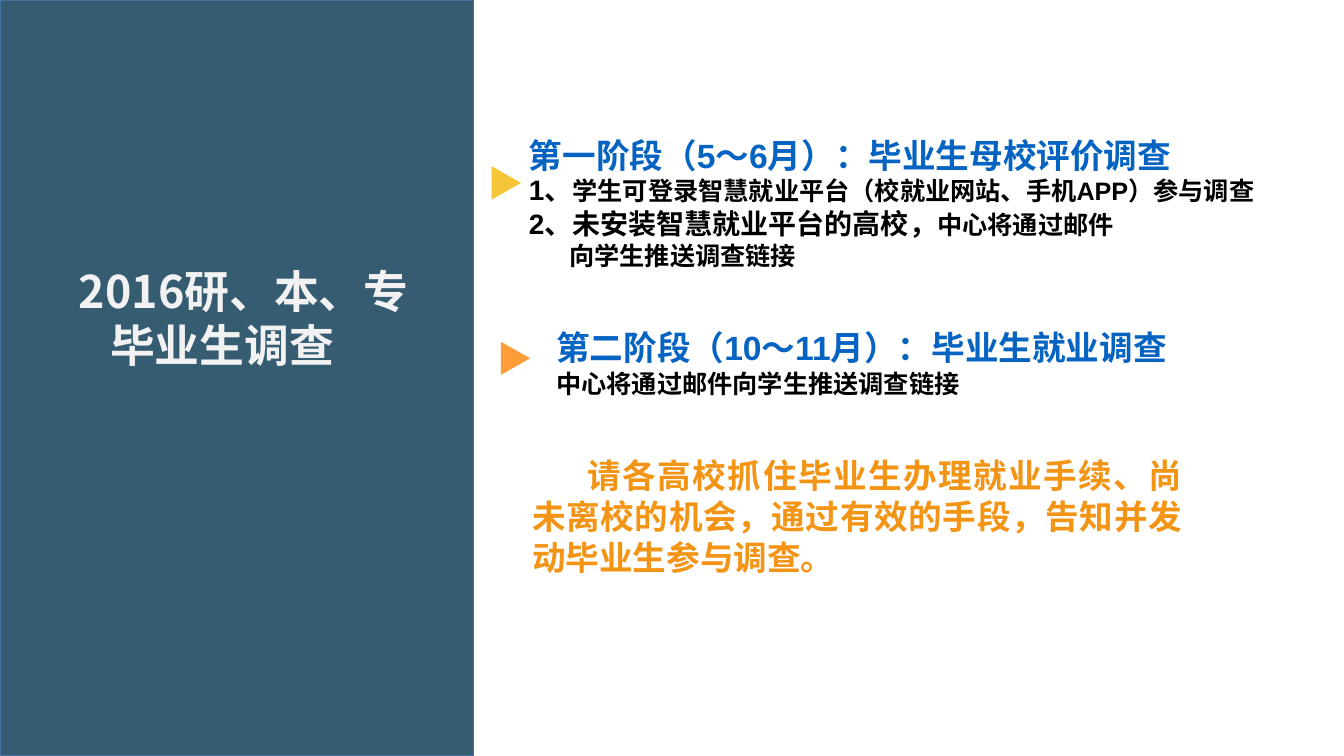
"""Build the slide on the two stages of the 2016 graduate survey."""
from lxml import etree
from pptx import Presentation
from pptx.dml.color import RGBColor
from pptx.enum.shapes import MSO_SHAPE
from pptx.enum.text import MSO_ANCHOR, MSO_AUTO_SIZE, PP_ALIGN
from pptx.oxml.ns import qn
from pptx.util import Cm, Pt

RECT = MSO_SHAPE.RECTANGLE
ARROW = MSO_SHAPE.ISOSCELES_TRIANGLE
TOP = MSO_ANCHOR.TOP
FIXED = MSO_AUTO_SIZE.NONE
LEFT = PP_ALIGN.LEFT
JUST = PP_ALIGN.JUSTIFY

SLATE = RGBColor(0x36, 0x5C, 0x71)
EDGE = RGBColor(0x43, 0x73, 0x9E)
PALE = RGBColor(0xF2, 0xF2, 0xF2)
BLUE = RGBColor(0x05, 0x63, 0xC1)
BLACK = RGBColor(0x00, 0x00, 0x00)
GOLD = RGBColor(0xF5, 0xC6, 0x38)
AMBER = RGBColor(0xFF, 0x9D, 0x38)
ORANGE = RGBColor(0xF3, 0x94, 0x15)
SANS = "Arial"
HAN = "Noto Sans CJK SC"


def write(shape, lines, align, face):
    """Fill a shape with (runs, color, line pitch, left margin, first indent)."""
    frame = shape.text_frame
    frame.word_wrap = True
    frame.auto_size = FIXED
    frame.vertical_anchor = TOP
    for i, (parts, color, pitch, margin, indent) in enumerate(lines):
        para = frame.add_paragraph() if i else frame.paragraphs[0]
        para.alignment = align
        para.line_spacing = Pt(pitch)
        para.space_before = para.space_after = Pt(0)
        props = para._p.get_or_add_pPr()
        props.set("marL", str(Cm(margin)))
        props.set("indent", str(Cm(indent)))
        for text, size in parts:
            run = para.add_run()
            run.text = text
            run.font.name = face
            run.font.size = Pt(size)
            run.font.bold = True
            run.font.color.rgb = color
            east = etree.Element(qn("a:ea"), typeface=HAN)
            run.font._element.find(qn("a:latin")).addnext(east)


deck = Presentation()
deck.slide_width = Cm(33.87)
deck.slide_height = Cm(19.05)
slide = deck.slides.add_slide(deck.slide_layouts[5])
shapes = slide.shapes

panel = shapes.add_shape(RECT, 0, 0, Cm(11.94), deck.slide_height)
panel.shadow.inherit = False
panel.fill.solid()
panel.fill.fore_color.rgb = SLATE
panel.line.color.rgb = EDGE
panel.line.width = Pt(1)

title = shapes.title
title.element.addprevious(panel.element)
title.left, title.top = Cm(1.5), Cm(6.53)
title.width, title.height = Cm(9.15), Cm(4.2)
write(title, [
    ([("2016研、本、专", 32)], PALE, 38.2, 0, 0.23),
    ([("毕业生调查", 32)], PALE, 38.2, 1.02, 0),
], LEFT, HAN)

boxes = [
    (13.08, 3.25, 18.9, 4.57, [
        ([("第一阶段（5～6月）：毕业生母校评价调查", 24)], BLUE, 29.3, 0, 0),
        ([("1、", 20), ("学生可登录智慧就业平台（校就业网站、手机APP）参与调查", 18)],
         BLACK, 22.2, 0, 0),
        ([("2、未安装智慧就业平台的高校，", 20), ("中心将通过邮件", 18)],
         BLACK, 24, 0, 0),
        ([("向学生推送调查链接", 18)], BLACK, 22.2, 1.02, 0),
    ]),
    (13.77, 8.1, 20.1, 3.56, [
        ([("第二阶段（10～11月）：毕业生就业调查", 24)], BLUE, 29.3, 0, 0),
        ([("中心将通过邮件向学生推送调查链接", 18)], BLACK, 22.2, 0, 0),
    ]),
    (13.16, 11.33, 16.89, 3.3, [
        ([("请各高校抓住毕业生办理就业手续、尚未离校的机会，"
           "通过有效的手段，告知并发动毕业生参与调查。", 24)],
         ORANGE, 29.3, 0, 1.4),
    ]),
]
for x, y, wide, high, lines in boxes:
    box = shapes.add_textbox(Cm(x), Cm(y), Cm(wide), Cm(high))
    write(box, lines, JUST, SANS)

for x, y, color in [(12.34, 4.24, GOLD), (12.57, 8.66, AMBER)]:
    mark = shapes.add_shape(ARROW, Cm(x), Cm(y), Cm(0.84), Cm(0.74))
    mark.rotation = 90
    mark.shadow.inherit = False
    mark.fill.solid()
    mark.fill.fore_color.rgb = color
    mark.line.fill.background()

deck.save("out.pptx")
